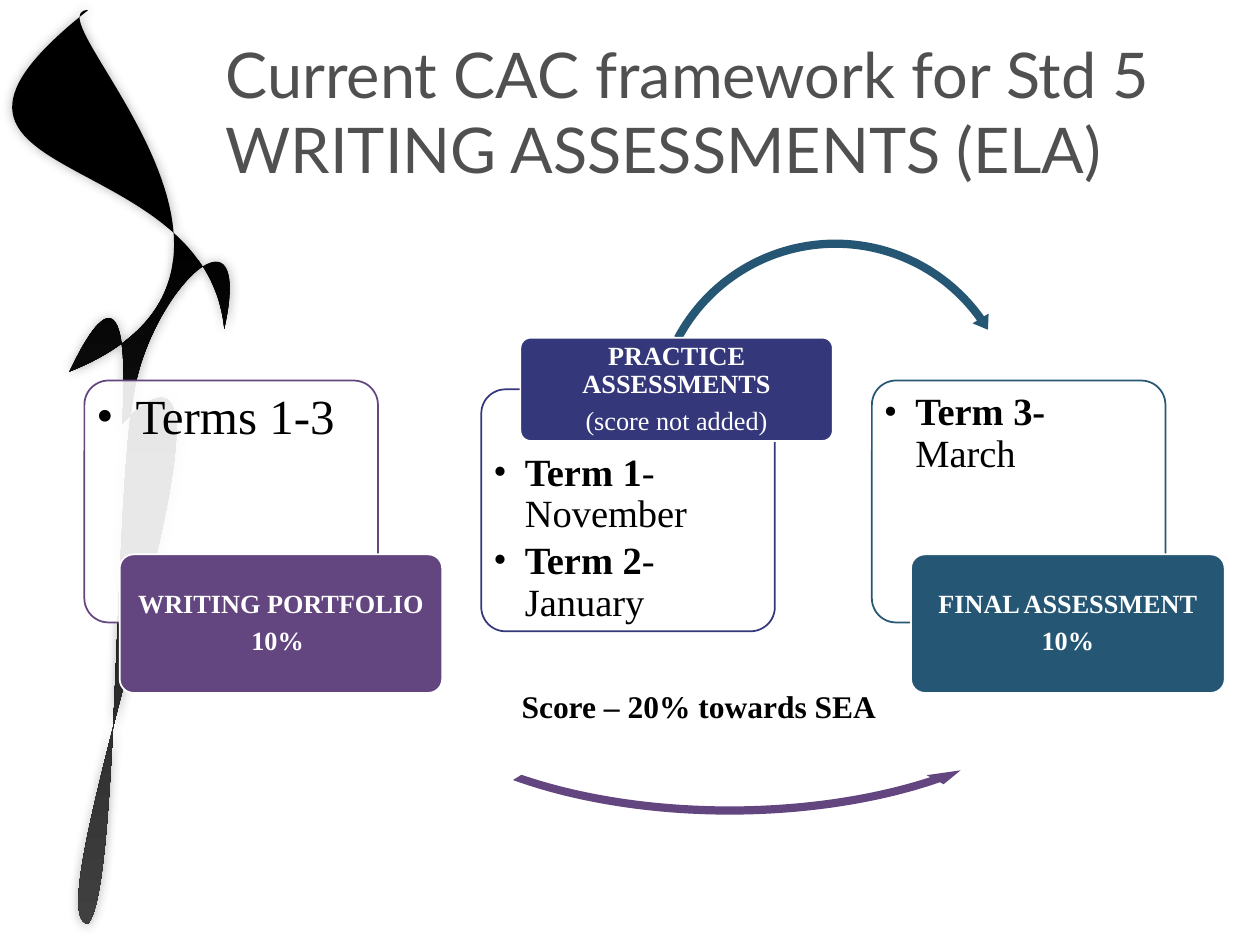
"""Build the slide on the Std 5 writing assessment framework."""
import pptx
import pptx.dml.color
import pptx.enum.shapes
import pptx.enum.text
import pptx.oxml
import pptx.oxml.ns
import pptx.util
from dataclasses import dataclass

Inches, Pt = pptx.util.Inches, pptx.util.Pt
RGB = pptx.dml.color.RGBColor.from_string
Kind = pptx.enum.shapes.MSO_SHAPE
Align = pptx.enum.text.PP_ALIGN
Anchor = pptx.enum.text.MSO_ANCHOR
NS = pptx.oxml.ns.nsdecls("a")
qn = pptx.oxml.ns.qn


@dataclass(frozen=True)
class Theme:
    head: str = "Lato"
    body: str = "Times New Roman"
    ink: str = "000000"
    grey: str = "505050"
    dark: str = "404040"
    white: str = "FFFFFF"
    plum: str = "63457F"
    navy: str = "34387B"
    teal: str = "255775"
    title: int = 36
    large: int = 28
    list: int = 22
    score: int = 18
    label: int = 15


theme = Theme()


def write(shape, paras, font=theme.body, size=theme.label, color=theme.ink,
          align=Align.LEFT, anchor=Anchor.TOP, pad=(0.1, 0.05, 0.1, 0.05),
          lead=1.0, after=0, dent=0):
    """Fill a shape with paragraphs made of (text, bold) parts."""
    frame = shape.text_frame
    frame.word_wrap = True
    frame.auto_size = pptx.enum.text.MSO_AUTO_SIZE.NONE
    frame.vertical_anchor = anchor
    (frame.margin_left, frame.margin_top,
     frame.margin_right, frame.margin_bottom) = map(Inches, pad)
    for num, parts in enumerate(paras):
        para = frame.add_paragraph() if num else frame.paragraphs[0]
        para.alignment, para.line_spacing = align, lead
        para.space_after = Pt(after)
        if dent:
            prop = para._p.get_or_add_pPr()
            prop.set("marL", str(Inches(dent)))
            prop.set("indent", str(-Inches(dent)))
            prop.append(pptx.oxml.parse_xml(f'<a:buFont {NS} typeface="{font}"/>'))
            prop.append(pptx.oxml.parse_xml(f'<a:buChar {NS} char="•"/>'))
        for text, bold in parts:
            if text == "\v":
                para.add_line_break()
                continue
            run = para.add_run()
            run.text = text
            run.font.name, run.font.size, run.font.bold = font, Pt(size), bold
            run.font.color.rgb = RGB(color)


def draw(kind, box, fill, line=None, adj=(0.1,)):
    """Add a preset shape with a plain fill and an optional outline."""
    shape = slide.shapes.add_shape(kind, *map(Inches, box))
    shape.shadow.inherit = False
    for num, value in enumerate(adj):
        shape.adjustments[num] = value
    shape.fill.solid()
    shape.fill.fore_color.rgb = RGB(fill)
    if line:
        shape.line.color.rgb = RGB(line)
        shape.line.width = Pt(1)
    else:
        shape.line.fill.background()
    return shape


deck = pptx.Presentation()
deck.slide_width, deck.slide_height = Inches(10), Inches(7.5)
slide = deck.slides.add_slide(deck.slide_layouts[5])

title = slide.shapes.title
title.left, title.top = Inches(1.69), Inches(0.29)
title.width, title.height = Inches(8.11), Inches(1.18)
write(title, [[("Current CAC framework for Std 5 ", False), ("\v", False),
               ("WRITING ASSESSMENTS (ELA)", False)]],
      font=theme.head, size=theme.title, color=theme.grey, anchor=Anchor.MIDDLE)

curves = [
    [(106, 176), (56, 295), (55, 295)],
    [(257, 215), (21, 8), (70, 8)],
    [(-108, 149), (163, 111), (178, 261)],
    [(201, 157), (126, 224), (108, 303)],
    [(90, 381), (95, 704), (70, 733)],
    [(21, 733), (225, 207), (97, 336)],
]
pen = slide.shapes.build_freeform(97, 336, scale=Inches(0.01))
pen.add_line_segments(sum(curves, []), close=True)
ribbon = pen.convert_to_shape()
lines = list(ribbon.element.iter(qn("a:lnTo")))
for num in range(0, len(lines), 3):
    bend = pptx.oxml.parse_xml(f"<a:cubicBezTo {NS}/>")
    lines[num].addprevious(bend)
    for line in lines[num:num + 3]:
        bend.append(line[0])
        line.getparent().remove(line)
ribbon.line.fill.background()
ribbon.fill.gradient()
ribbon.fill.gradient_angle = 270
for stop, place, tone in zip(ribbon.fill.gradient_stops, (0.25, 1), (theme.ink, theme.dark)):
    stop.position, stop.color.rgb = place, RGB(tone)
ribbon.shadow.inherit = False
glow = ribbon.element.spPr.find(qn("a:effectLst"))
glow.append(pptx.oxml.parse_xml(
    f'<a:outerShdw {NS} blurRad="{Pt(6)}" dist="0" dir="0"><a:srgbClr val="{theme.dark}">'
    '<a:alpha val="40000"/></a:srgbClr></a:outerShdw>'))
title.element.addprevious(ribbon.element)

stages = [
    dict(tone=theme.plum, card=(0.67, 3.02), top=0.04, size=theme.large, dent=0.31,
         items=[[("Terms 1-3", False)]],
         arrow=(Kind.LEFT_CIRCULAR_ARROW, (2.93, 3.78, 5.72, 2.73),
                (0.024, 2.851, 19.566, 89.205, 0.028), theme.plum),
         tag=(0.95, 4.4, 2.56, 1.1),
         label=[[("WRITING PORTFOLIO", True)], [("10% ", True)]]),
    dict(tone=theme.navy, card=(3.82, 3.09), top=0.45, size=theme.list, dent=0.25,
         items=[[("Term 1", True), ("- November", False)],
                [("Term 2", True), ("- January", False)]],
         arrow=(Kind.CIRCULAR_ARROW, (5.14, 1.86, 2.98, 2.98),
                (0.022, 2.599, 194.699, 124.808, 0.025), theme.teal),
         tag=(4.13, 2.68, 2.48, 0.82),
         label=[[("PRACTICE ASSESSMENTS", True)], [("(score not added)", False)]]),
    dict(tone=theme.teal, card=(6.92, 3.02), top=0.04, size=theme.list, dent=0.25,
         items=[[("Term 3-", True), (" March", False)]], arrow=None,
         tag=(7.23, 4.4, 2.49, 1.1),
         label=[[("FINAL ASSESSMENT", True)], [("10%", True)]]),
]
for stage in stages:
    card = draw(Kind.ROUNDED_RECTANGLE, (*stage["card"], 2.33, 1.92), theme.white, stage["tone"])
    paint = card.element.spPr.find(qn("a:solidFill"))[0]
    paint.append(pptx.oxml.parse_xml(f'<a:alpha {NS} val="90000"/>'))
    write(card, stage["items"], size=stage["size"], dent=stage["dent"],
          pad=(0.04, stage["top"], 0.04, 0.04), lead=0.9, after=3)
    if stage["arrow"]:
        kind, box, adj, tone = stage["arrow"]
        draw(kind, box, tone, adj=adj)
    tag = draw(Kind.ROUNDED_RECTANGLE, stage["tag"], stage["tone"], theme.white)
    write(tag, stage["label"], color=theme.white, align=Align.CENTER,
          anchor=Anchor.MIDDLE, pad=(0.03, 0.02, 0.03, 0.02), lead=0.9, after=5)

score = slide.shapes.add_textbox(Inches(3.98), Inches(5.4), Inches(3.23), Inches(0.71))
write(score, [[("Score – 20% towards SEA", True)]], size=theme.score,
      pad=(0.16, 0.05, 0.1, 0.05))

deck.save("out.pptx")
